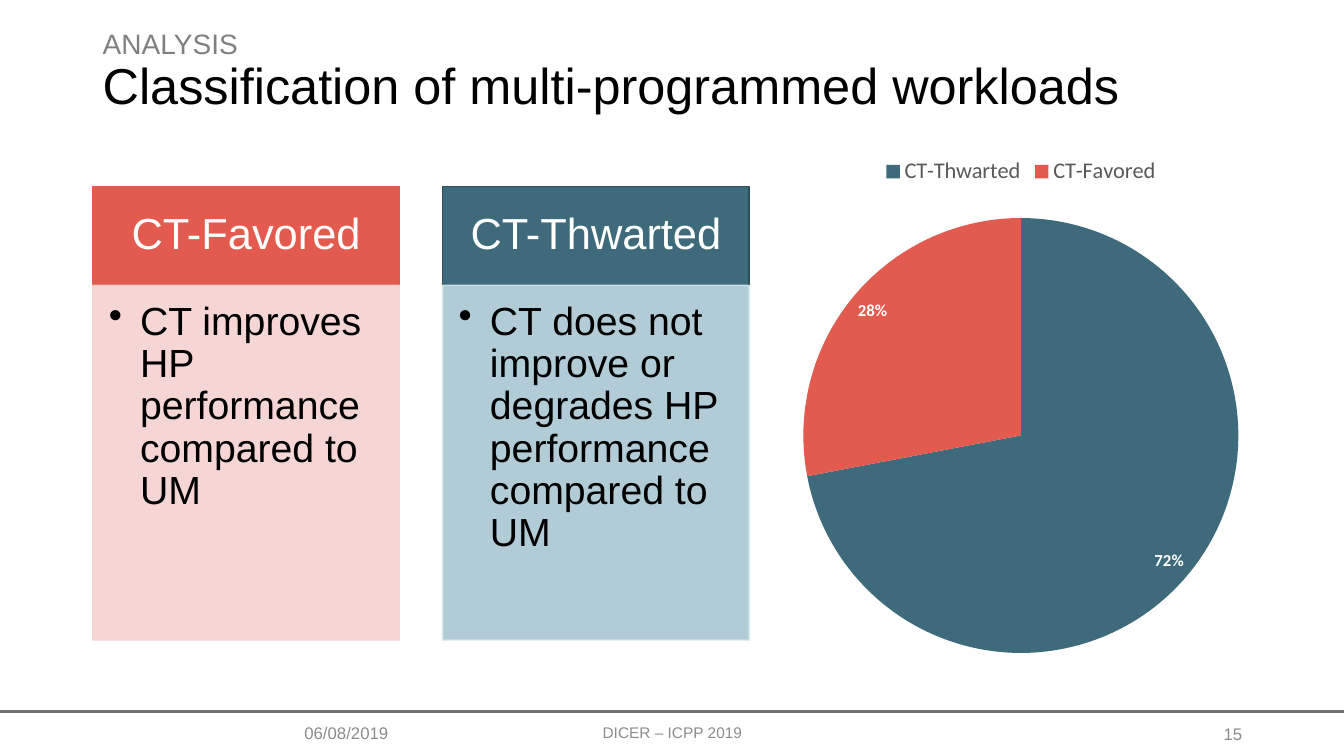
from lxml import etree
from pptx import Presentation
from pptx import util as u
from pptx.chart import data as chart_data
from pptx.dml import color
from pptx.enum import chart as ch
from pptx.enum import shapes, text
from pptx.oxml import ns

PX = 9144  # EMU per px, 100 px to the inch
RED, BLUE, GREY = "E25B4E", "3E6A7B", "8C8C8C"
LEFT, CENTER, RIGHT = text.PP_ALIGN.LEFT, text.PP_ALIGN.CENTER, text.PP_ALIGN.RIGHT
TOP, MIDDLE = text.MSO_ANCHOR.TOP, text.MSO_ANCHOR.MIDDLE


def px(*lengths):
    return [u.Emu(length * PX) for length in lengths]


def rgb(value):
    return color.RGBColor.from_string(value)


def apply(target, values):
    for name, value in values.items():
        setattr(target, name, value)


class SlideBuilder:
    font = "Arial"
    chart_font = "Calibri"
    margins = (10, 5, 10, 5)

    def __init__(self, slide):
        self.slide = slide

    def style(self, font, size, ink, name=None, bold=False):
        apply(font, {"name": name or self.font, "size": u.Pt(size), "bold": bold})
        font.color.rgb = rgb(ink)

    def fill_text(self, box, lines, align=LEFT, anchor=MIDDLE, margins=margins,
                  spacing=1.0, bullet=False):
        """Fill a box with one paragraph; lines holds (words, size, ink)."""
        left, top, right, bottom = px(*margins)
        apply(box.text_frame, {
            "word_wrap": True, "vertical_anchor": anchor,
            "margin_left": left, "margin_top": top,
            "margin_right": right, "margin_bottom": bottom})
        para = box.text_frame.paragraphs[0]
        if bullet:
            props = para._p.get_or_add_pPr()
            indent = px(31)[0]
            props.set("marL", str(indent))
            props.set("indent", str(-indent))
            etree.SubElement(props, ns.qn("a:buChar")).set("char", "•")
        apply(para, {"alignment": align, "line_spacing": spacing})
        for index, (words, size, ink) in enumerate(lines):
            if index:
                para.add_line_break()
            span = para.add_run()
            span.text = words
            self.style(span.font, size, ink)

    def label(self, place, lines, **layout):
        self.fill_text(self.slide.shapes.add_textbox(*px(*place)), lines, **layout)

    def panel(self, place, fill, edge, lines, opacity=100, **layout):
        box = self.slide.shapes.add_shape(shapes.MSO_SHAPE.RECTANGLE, *px(*place))
        box.shadow.inherit = False
        box.fill.solid()
        box.line.width = u.Pt(1)
        for paint, value in ((box.fill.fore_color, fill), (box.line.color, edge)):
            paint.rgb = rgb(value)
        if opacity < 100:
            for tint in box._element.spPr.iter(ns.qn("a:srgbClr")):
                etree.SubElement(tint, ns.qn("a:alpha")).set("val", str(opacity * 1000))
        self.fill_text(box, lines, **layout)

    def rule(self, start, end, ink, width):
        line = self.slide.shapes.add_connector(
            shapes.MSO_CONNECTOR.STRAIGHT, *px(*start, *end))
        line.line.color.rgb = rgb(ink)
        line.line.width = u.Pt(width)
        etree.SubElement(line._element.spPr, ns.qn("a:effectLst"))

    def pie(self, place, shares):
        """Draw a pie from (name, value, fill) shares."""
        data = chart_data.CategoryChartData()
        data.categories = [name for name, _, _ in shares]
        data.add_series("Series 1", [value for _, value, _ in shares])
        chart = self.slide.shapes.add_chart(
            ch.XL_CHART_TYPE.PIE, *px(*place), data).chart
        apply(chart, {"has_title": False, "has_legend": True})
        self.style(chart.font, 10, "000000", self.chart_font)
        apply(chart.legend, {"position": ch.XL_LEGEND_POSITION.TOP,
                             "include_in_layout": False})
        self.style(chart.legend.font, 16, "595959", self.chart_font)

        plot = chart.plots[0]
        plot.vary_by_categories = True
        for index, (_, _, fill) in enumerate(shares):
            wedge = plot.series[0].points[index].format.fill
            wedge.solid()
            wedge.fore_color.rgb = rgb(fill)
        labels = plot.series[0].data_labels
        apply(labels, {"show_percentage": True, "show_value": False,
                       "number_format": "0%", "number_format_is_linked": False,
                       "position": ch.XL_LABEL_POSITION.INSIDE_END})
        self.style(labels.font, 12, "FFFFFF", self.chart_font, bold=True)


def main():
    deck = Presentation()
    deck.slide_width, deck.slide_height = px(1333, 750)
    page = SlideBuilder(deck.slides.add_slide(deck.slide_layouts[6]))

    # Footer rule and title
    page.rule((0, 706), (1333, 706), "767171", 2.25)
    page.label((92, 0, 1150, 145), [
        ("ANALYSIS", 20, "808080"),
        ("Classification of multi-programmed workloads", 36, "000000")], spacing=0.9)

    # Workload classes: a heading above a description
    classes = [
        ("CT-Favored", "CT improves HP performance compared to UM",
         RED, RED, "F4D2D0", "F4D2D0"),
        ("CT-Thwarted", "CT does not improve or degrades HP performance compared to UM",
         BLUE, "2E4E5B", "A9C7D3", "D8E9E8")]
    for column, (name, meaning, fill, edge, body_fill, body_edge) in enumerate(classes):
        left = 92 + 347 * column
        page.panel((left, 185, 304, 98), fill, edge, [(name, 31, "FFFFFF")],
                   align=CENTER, margins=(24, 14, 24, 14), spacing=0.9)
        page.panel((left, 283, 304, 352), body_fill, body_edge,
                   [(meaning, 28, "000000")], opacity=90, anchor=TOP,
                   margins=(16, 16, 22, 24), spacing=0.9, bullet=True)

    # Share of each class
    page.pie((783, 145, 459, 531), [("CT-Thwarted", 72, BLUE), ("CT-Favored", 28, RED)])

    # Footer
    page.label((292, 713, 118, 28), [("06/08/2019", 12, GREY)])
    page.label((442, 707, 450, 40), [("DICER – ICPP 2019", 11, GREY)], align=CENTER)
    page.label((942, 708, 300, 40), [("15", 12, GREY)], align=RIGHT)

    deck.save("out.pptx")


if __name__ == "__main__":
    main()
